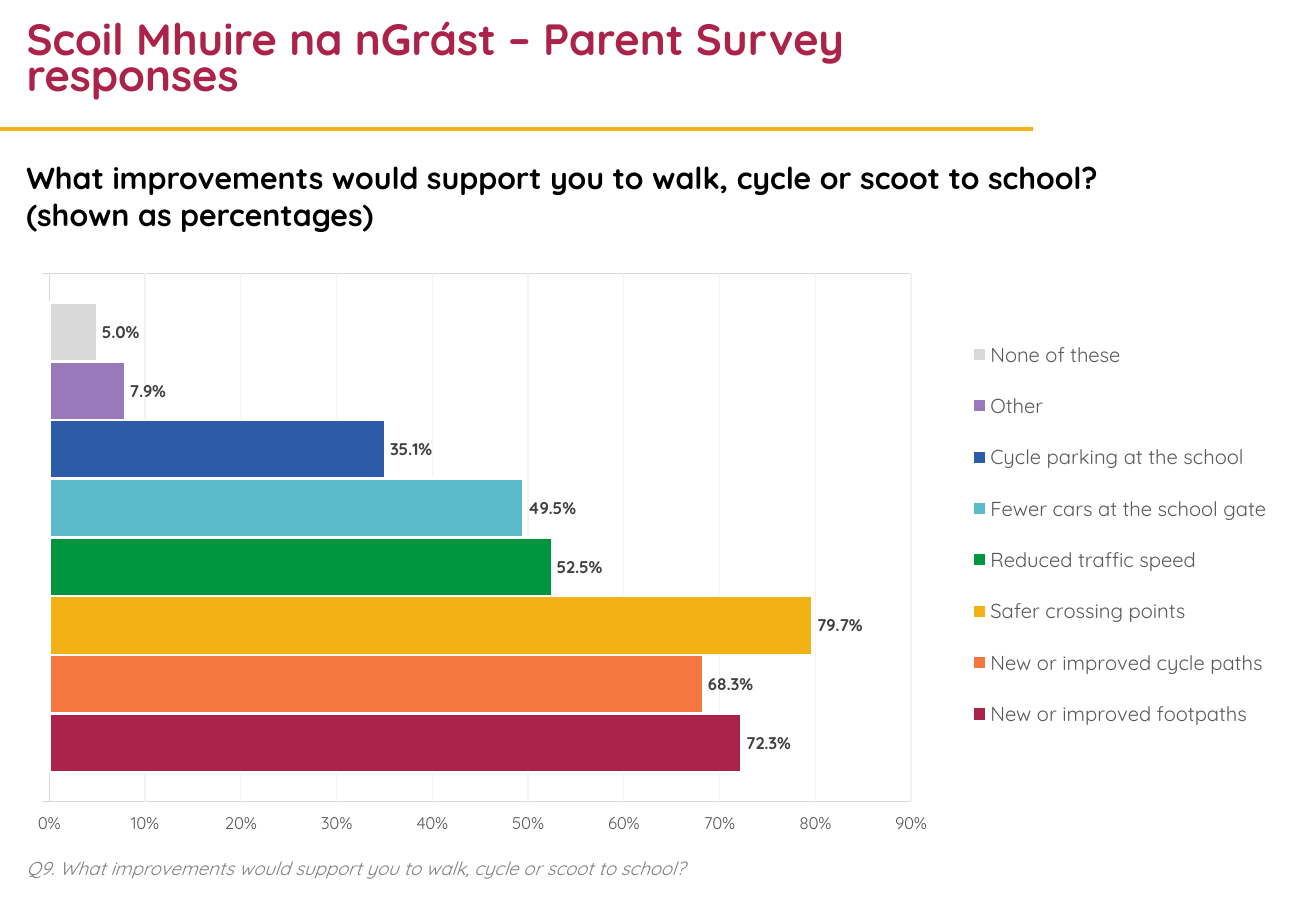
from lxml.etree import SubElement
from pptx import Presentation
from pptx.chart.data import CategoryChartData
from pptx.dml.color import RGBColor
from pptx.enum.chart import XL_CHART_TYPE, XL_LABEL_POSITION, XL_LEGEND_POSITION, XL_TICK_MARK
from pptx.enum.text import MSO_ANCHOR, MSO_AUTO_SIZE, PP_ALIGN
from pptx.oxml import parse_xml
from pptx.oxml.ns import nsdecls, qn
from pptx.util import Cm, Pt

FONT = "Quicksand"
CRIMSON = RGBColor(0xAB, 0x22, 0x4A)
ORANGE = RGBColor(0xF3, 0x77, 0x3F)
YELLOW = RGBColor(0xF2, 0xB1, 0x14)
GREEN = RGBColor(0x00, 0x96, 0x40)
TEAL = RGBColor(0x5A, 0xBA, 0xCA)
BLUE = RGBColor(0x2C, 0x5C, 0xA8)
PURPLE = RGBColor(0x9A, 0x79, 0xBB)
SILVER = RGBColor(0xD9, 0xD9, 0xD9)
GRID = RGBColor(0xF2, 0xF2, 0xF2)
WHITE = RGBColor(0xFF, 0xFF, 0xFF)
BLACK = RGBColor(0, 0, 0)
LABEL = RGBColor(0x40, 0x40, 0x40)
AXIS = RGBColor(0x59, 0x59, 0x59)
NOTE = RGBColor(0x80, 0x80, 0x80)

IMPROVEMENTS = [
    ("New or improved footpaths", 0.723, CRIMSON),
    ("New or improved cycle paths", 0.683, ORANGE),
    ("Safer crossing points", 0.797, YELLOW),
    ("Reduced traffic speed", 0.525, GREEN),
    ("Fewer cars at the school gate", 0.495, TEAL),
    ("Cycle parking at the school", 0.351, BLUE),
    ("Other", 0.079, PURPLE),
    ("None of these", 0.05, SILVER),
]


def set_font(font, size, color, bold=False, italic=False):
    font.name = FONT
    font.size = Pt(size)
    font.bold = bold
    font.italic = italic
    font.color.rgb = color


def set_line(line, color, width):
    line.color.rgb = color
    line.width = Pt(width)


def fill_text(sp, text, size, color, wrap=True, **style):
    tf = sp.text_frame
    tf.text = text
    tf.word_wrap = wrap
    tf.auto_size = MSO_AUTO_SIZE.NONE
    tf.vertical_anchor = MSO_ANCHOR.MIDDLE
    p = tf.paragraphs[0]
    p.alignment = PP_ALIGN.LEFT
    set_font(p.runs[0].font, size, color, **style)
    return p


def add_header(s, x, y, w, h):
    title = s.shapes.title
    title.left, title.top, title.width, title.height = x + Cm(0.3), y + Cm(0.3), w - Cm(0.49), h - Cm(0.68)
    p = fill_text(title, "Scoil Mhuire na nGrást – Parent Survey responses", 25.9, CRIMSON, bold=True)
    p.line_spacing = 0.7
    p.space_before = Pt(0)
    rule = s.shapes.add_connector(1, x, y + h, x + w, y + h)
    set_line(rule.line, YELLOW, 2.25)
    SubElement(rule._element.spPr, qn("a:effectLst"))


def add_text(s, x, y, w, h, text, size, color, **style):
    fill_text(s.shapes.add_textbox(x, y, w, h), text, size, color, **style)


def manual_layout(x, y, w, h, inner=False):
    target = '<c:layoutTarget val="inner"/>' if inner else ""
    return parse_xml(
        f'<c:layout {nsdecls("c")}><c:manualLayout>{target}'
        '<c:xMode val="edge"/><c:yMode val="edge"/>'
        f'<c:x val="{x}"/><c:y val="{y}"/><c:w val="{w}"/><c:h val="{h}"/>'
        '</c:manualLayout></c:layout>'
    )


def format_axes(chart):
    cat, val = chart.category_axis, chart.value_axis
    for axis in (cat, val):
        axis.major_tick_mark = XL_TICK_MARK.OUTSIDE
        axis.minor_tick_mark = XL_TICK_MARK.NONE
        axis.has_major_gridlines = True
        set_font(axis.tick_labels.font, 10, AXIS)
    set_line(cat.format.line, SILVER, 0.75)
    set_line(cat.major_gridlines.format.line, SILVER, 0.75)
    set_line(val.major_gridlines.format.line, GRID, 0.75)
    val.format.line.fill.background()
    val.minimum_scale, val.maximum_scale, val.major_unit = 0, 0.9, 0.1
    val.tick_labels.number_format = "0%"
    val.tick_labels.number_format_is_linked = False


def format_bars(plot):
    plot.gap_width = 100
    plot.overlap = 0
    plot.vary_by_categories = False
    for series, (_, _, color) in zip(plot.series, IMPROVEMENTS):
        series.format.fill.solid()
        series.format.fill.fore_color.rgb = color
        set_line(series.format.line, WHITE, 1.5)
        labels = series.data_labels
        labels.show_value = True
        labels.position = XL_LABEL_POSITION.OUTSIDE_END
        labels.number_format = "0.0%"
        labels.number_format_is_linked = False
        set_font(labels.font, 10, LABEL, bold=True)


def add_improvements_chart(s, x, y, w, h):
    data = CategoryChartData(number_format="0.0%")
    data.categories = [" "]
    for name, share, _ in IMPROVEMENTS:
        data.add_series(name, [share])
    chart = s.shapes.add_chart(XL_CHART_TYPE.BAR_CLUSTERED, x, y, w, h, data).chart
    chart.has_title = False
    set_font(chart.font, 10, BLACK)
    format_axes(chart)
    format_bars(chart.plots[0])

    chart.has_legend = True
    legend = chart.legend
    legend.position = XL_LEGEND_POSITION.RIGHT
    legend.include_layout = False
    set_font(legend.font, 12, AXIS)

    area = chart._chartSpace.chart.plotArea
    for layout in area.findall(qn("c:layout")):
        area.remove(layout)
    area.insert(0, manual_layout(0.02, 0.05, 0.68, 0.87, inner=True))
    box = legend._element
    for layout in box.findall(qn("c:layout")):
        box.remove(layout)
    box.find(qn("c:legendPos")).addnext(manual_layout(0.74, 0.12, 0.25, 0.72))


def main():
    prs = Presentation()
    prs.slide_width, prs.slide_height = Cm(27.51), Cm(19.05)
    s = prs.slides.add_slide(prs.slide_layouts[5])
    add_header(s, Cm(0), Cm(0), Cm(21.59), Cm(2.69))
    add_text(s, Cm(0.3), Cm(3.2), Cm(23.32), Cm(1.8),
             "What improvements would support you to walk, cycle or scoot to school? (shown as percentages)",
             18, BLACK, bold=True)
    add_improvements_chart(s, Cm(0.5), Cm(5.08), Cm(26.49), Cm(12.7))
    add_text(s, Cm(0.3), Cm(17.78), Cm(15.77), Cm(0.74),
             "Q9. What improvements would support you to walk, cycle or scoot to school?",
             11, NOTE, wrap=False, italic=True)
    prs.save("out.pptx")


if __name__ == "__main__":
    main()
